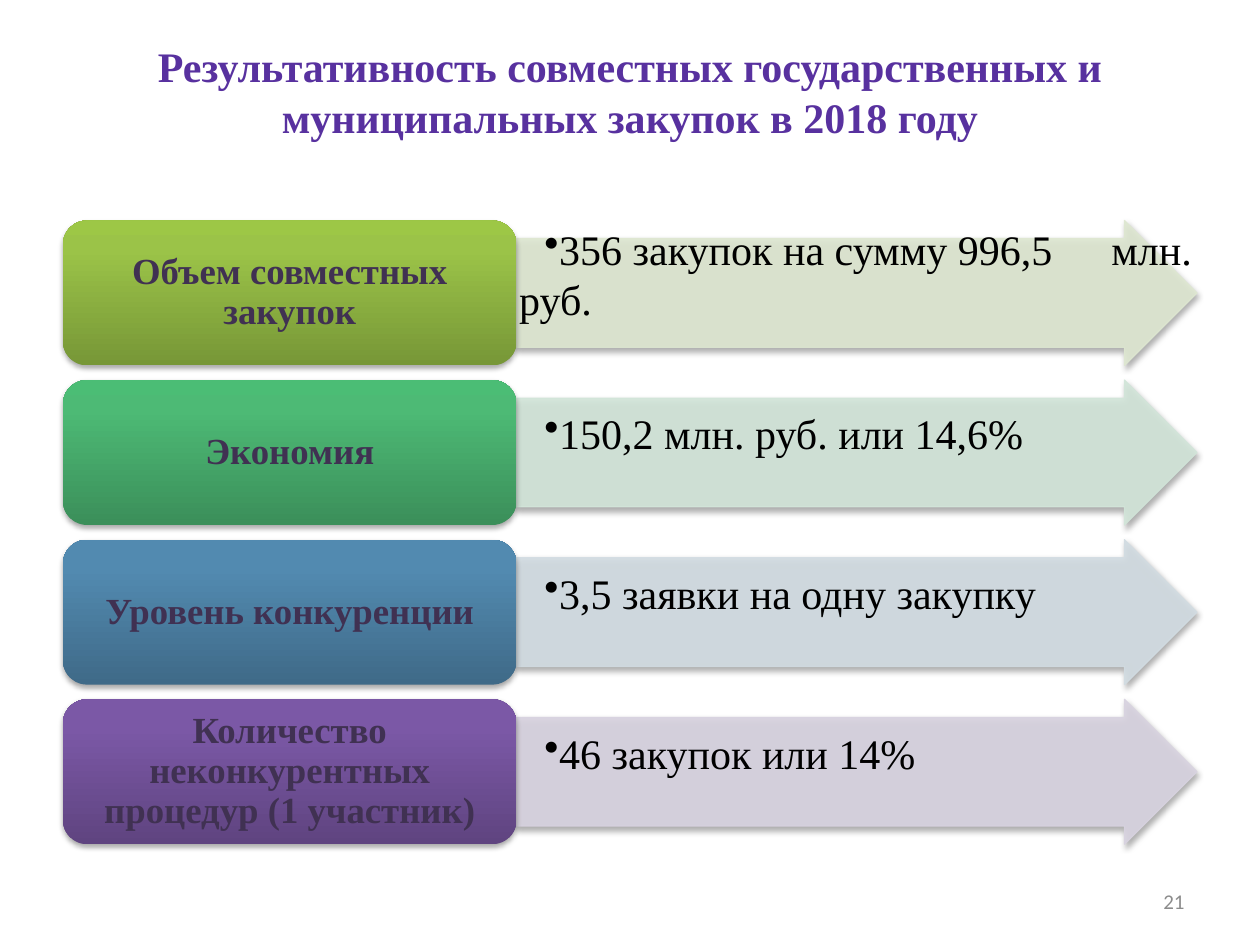
from copy import deepcopy

from lxml import etree
from pptx import Presentation
from pptx.dml.color import RGBColor
from pptx.enum.shapes import MSO_SHAPE
from pptx.enum.text import MSO_ANCHOR, PP_ALIGN
from pptx.oxml.ns import qn
from pptx.util import Inches, Pt

ARROW, ROUNDED = MSO_SHAPE.RIGHT_ARROW, MSO_SHAPE.ROUNDED_RECTANGLE
TOP, MIDDLE = MSO_ANCHOR.TOP, MSO_ANCHOR.MIDDLE
LEFT, CENTER, RIGHT = PP_ALIGN.LEFT, PP_ALIGN.CENTER, PP_ALIGN.RIGHT
SERIF, SANS = "Times New Roman", "Calibri"
TITLE_ONLY = 5

TITLE = "Результативность совместных государственных и муниципальных закупок в 2018 году"
ROWS = [
    ("Объем совместных закупок", "356 закупок на сумму 996,5\tмлн. руб.",
     1.0, "DEE7D1", ("779737", "9BC348", "9DC746")),
    ("Экономия", "150,2 млн. руб. или 14,6%",
     1.5, "D2E5D9", ("3B8F5A", "4DBA75", "4BBD75")),
    ("Уровень конкуренции", "3,5 заявки на одну закупку",
     1.5, "D2DCE2", ("3F6A88", "528AB0", "518BB3")),
    ("Количество неконкурентных процедур (1 участник)", "46 закупок или 14%",
     1.5, "D8D3E0", ("5F4480", "7B58A6", "7C57A8")),
]


def rgb(value):
    """Turn a hex string into a colour."""
    return RGBColor.from_string(value)


def add_node(parent, tag, **attributes):
    """Append a drawing element with the given attributes."""
    return etree.SubElement(parent, qn(tag), {key: str(value) for key, value in attributes.items()})


def write(shape, text, size, color, font=SERIF, bold=False, align=LEFT,
          anchor=TOP, margins=(0.1, 0.05), spacing=None):
    """Put one formatted paragraph into a shape and return it."""
    frame = shape.text_frame
    frame.word_wrap = True
    frame.vertical_anchor = anchor
    frame.margin_left = frame.margin_right = Inches(margins[0])
    frame.margin_top = frame.margin_bottom = Inches(margins[1])
    para = frame.paragraphs[0]
    para.alignment = align
    if spacing:
        para.line_spacing = spacing
    span = para.add_run()
    span.text = text
    span.font.name, span.font.size, span.font.bold = font, Pt(size), bold
    span.font.color.rgb = rgb(color)
    return para


def add_shadow(shape):
    """Give a shape a soft shadow that falls straight down."""
    shape.shadow.inherit = False
    effects = shape._element.spPr.find(qn("a:effectLst"))
    shadow = add_node(effects, "a:outerShdw", blurRad=Pt(3.1), dist=Pt(1.8),
                      dir=5400000, rotWithShape=0)
    color = add_node(shadow, "a:srgbClr", val="000000")
    add_node(color, "a:alpha", val=35000)


def fill_gradient(shape, colors):
    """Fill a shape with three colours running from bottom to top."""
    shape.fill.gradient()
    shape.fill.gradient_angle = 90
    stop_list = shape._element.spPr.find(".//" + qn("a:gsLst"))
    stop_list.append(deepcopy(stop_list[0]))
    for stop, position, color in zip(shape.fill.gradient_stops, (0, 0.8, 1), colors):
        stop.position = position
        stop.color.rgb = rgb(color)


def add_arrow(page, box, text, spacing, color):
    """Draw a pale arrow with a bulleted result over it."""
    arrow = page.shapes.add_shape(ARROW, *box)
    arrow.adjustments[0], arrow.adjustments[1] = 0.75, 0.5
    arrow.fill.solid()
    arrow.fill.fore_color.rgb = rgb(color)
    arrow.line.color.rgb = rgb(color)
    arrow.line.width = Pt(0.75)
    for shade in arrow._element.spPr.iter(qn("a:srgbClr")):
        add_node(shade, "a:alpha", val=90000)
    add_shadow(arrow)

    result = page.shapes.add_textbox(*box)
    para = write(result, text, 24, "000000", margins=(0.02, 0.02), spacing=spacing)
    properties = para._p.get_or_add_pPr()
    properties.set("marL", "0")
    properties.set("indent", str(Inches(0.2)))
    add_node(properties, "a:buChar", char="•")
    if "\t" in text:
        tabs = add_node(properties, "a:tabLst")
        add_node(tabs, "a:tab", pos=Inches(4.7), algn="l")


def add_label(page, box, text, colors):
    """Draw a rounded gradient block with a bold caption."""
    block = page.shapes.add_shape(ROUNDED, *box)
    fill_gradient(block, colors)
    block.line.fill.background()
    add_shadow(block)
    write(block, text, 21, "403152", bold=True, align=CENTER, anchor=MIDDLE,
          margins=(0.04, 0), spacing=0.9)


def add_rows(page, left, top, width, height):
    """Stack the label and arrow rows evenly in the given box."""
    row_height = Inches(1.15)
    label_width = int(width * 0.4)
    step = (height - row_height) // (len(ROWS) - 1)
    for index, (label, result, spacing, pale, colors) in enumerate(ROWS):
        y = top + index * step
        add_arrow(page, (left + label_width, y, width - label_width, row_height),
                  result, spacing, pale)
        add_label(page, (left, y, label_width, row_height), label, colors)


def add_title(page, left, top, width, height):
    """Place and format the title placeholder."""
    title = page.shapes.title
    title.left, title.top, title.width, title.height = left, top, width, height
    write(title, TITLE, 24, "58319F", bold=True, align=CENTER, anchor=MIDDLE)


def add_page_number(page, left, top, width, height):
    """Write the page number in the given box."""
    box = page.shapes.add_textbox(left, top, width, height)
    write(box, "21", 12, "8C8C8C", font=SANS, align=RIGHT, anchor=MIDDLE)


def main():
    """Build the deck and save it."""
    deck = Presentation()
    deck.slide_width, deck.slide_height = Inches(10), Inches(7.5)
    page = deck.slides.add_slide(deck.slide_layouts[TITLE_ONLY])
    add_title(page, Inches(0.5), Inches(0.3), Inches(9), Inches(0.85))
    add_rows(page, Inches(0.5), Inches(1.75), Inches(9), Inches(4.95))
    add_page_number(page, Inches(7.17), Inches(6.95), Inches(2.33), Inches(0.4))
    deck.save("out.pptx")


if __name__ == "__main__":
    main()
